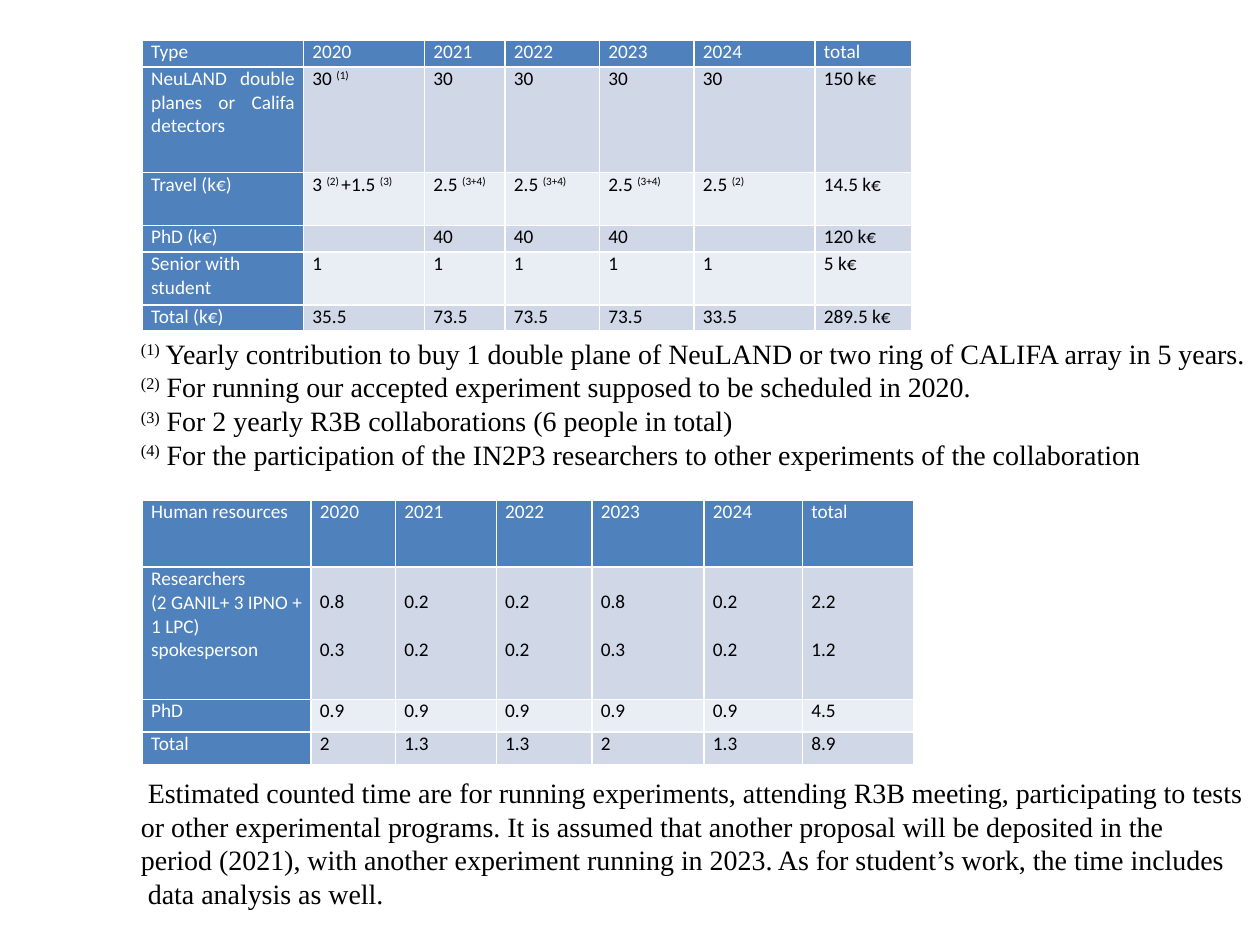
import lxml.etree
import pptx
import pptx.dml.color
import pptx.enum.text
import pptx.oxml.ns
import pptx.util

Inches = pptx.util.Inches
Pt = pptx.util.Pt
Align = pptx.enum.text.PP_ALIGN
Anchor = pptx.enum.text.MSO_ANCHOR
qn = pptx.oxml.ns.qn

COSTS = [
    ["Type", "2020", "2021", "2022", "2023", "2024", "total"],
    ["NeuLAND double planes or Califa detectors", "30 ^(1)", "30", "30", "30", "30", "150 k€"],
    ["Travel (k€)", "3 ^(2) ^+1.5 ^(3)", "2.5 ^(3+4)", "2.5 ^(3+4)", "2.5 ^(3+4)",
     "2.5 ^(2)", "14.5 k€"],
    ["PhD (k€)", "", "40", "40", "40", "", "120 k€"],
    ["Senior with student", "1", "1", "1", "1", "1", "5 k€"],
    ["Total (k€)", "35.5", "73.5", "73.5", "73.5", "33.5", "289.5 k€"],
]
STAFF = [
    ["Human resources", "2020", "2021", "2022", "2023", "2024", "total"],
    ["Researchers\n(2 GANIL+ 3 IPNO + 1 LPC)\nspokesperson",
     "0.8\n0.3", "0.2\n0.2", "0.2\n0.2", "0.8\n0.3", "0.2\n0.2", "2.2\n1.2"],
    ["PhD", "0.9", "0.9", "0.9", "0.9", "0.9", "4.5"],
    ["Total", "2", "1.3", "1.3", "2", "1.3", "8.9"],
]
NOTES = """^(1)^ Yearly contribution to buy 1 double plane of NeuLAND or two ring of CALIFA array in 5 years.
^(2)^ For running our accepted experiment supposed to be scheduled in 2020.
^(3)^ For 2 yearly R3B collaborations (6 people in total)
^(4)^ For the participation of the IN2P3 researchers to other experiments of the collaboration"""
TIME = """ Estimated counted time are for running experiments, attending R3B meeting, participating to tests
or other experimental programs. It is assumed that another proposal will be deposited in the
period (2021), with another experiment running in 2023. As for student’s work, the time includes
 data analysis as well."""


def color(code):
    return pptx.dml.color.RGBColor.from_string(code)


def write(frame, text, size=16, font="Times New Roman", ink="000000", align=Align.JUSTIFY, gap=0):
    """Fill a frame line by line; text between carets is raised."""
    for i, line in enumerate(text.split("\n")):
        para = frame.add_paragraph() if i else frame.paragraphs[0]
        para.alignment = align
        if i and gap:
            para.space_before = Pt(gap)
        for j, part in enumerate(line.split("^")):
            if not part:
                continue
            run = para.add_run()
            run.text = part
            run.font.size = Pt(size)
            run.font.name = font
            run.font.bold = False
            run.font.color.rgb = color(ink)
            if j % 2:
                run._r.get_or_add_rPr().set("baseline", "30000")
        if not line:
            lxml.etree.SubElement(para._p, qn("a:endParaRPr"), sz=str(size * 100))


class Deck:
    """Holds the table style and the current slide."""

    head = "4F81BD"
    bands = ("E9EDF4", "D0D8E8")
    edge = "FFFFFF"
    step = 13.4

    def __init__(self, show):
        self.slide = show.slides.add_slide(show.slide_layouts[6])

    def border(self, cell):
        props = cell._tc.get_or_add_tcPr()
        for side in ("lnL", "lnR", "lnT", "lnB"):
            line = lxml.etree.SubElement(props, qn("a:" + side), w=str(Pt(1)))
            fill = lxml.etree.SubElement(line, qn("a:solidFill"))
            lxml.etree.SubElement(fill, qn("a:srgbClr"), val=self.edge)

    def cell(self, cell, text, fill, ink, align):
        self.border(cell)
        cell.fill.solid()
        cell.fill.fore_color.rgb = color(fill)
        cell.margin_left = cell.margin_right = Inches(0.07)
        paired = text.count("\n") == 1
        cell.margin_top = Pt(self.step) if paired else 0
        cell.margin_bottom = 0
        write(cell.text_frame, text, size=11, font="Calibri", ink=ink, align=align,
              gap=self.step if paired else 0)

    def table(self, rows, top, widths, heights, align):
        shape = self.slide.shapes.add_table(
            len(rows), len(widths), Inches(1.13), Inches(top),
            Inches(sum(widths)), Inches(sum(heights)))
        grid = shape.table
        for col, width in zip(grid.columns, widths):
            col.width = Inches(width)
        for r, (row, height) in enumerate(zip(rows, heights)):
            grid.rows[r].height = Inches(height)
            for c, text in enumerate(row):
                main = r == 0 or c == 0
                self.cell(grid.cell(r, c), text,
                          self.head if main else self.bands[r % 2],
                          "FFFFFF" if main else "000000",
                          Align.LEFT if text.startswith("Senior") else align)

    def text(self, text, top, width, height, anchor=Anchor.TOP):
        box = self.slide.shapes.add_textbox(
            Inches(1.02), Inches(top), Inches(width), Inches(height))
        box.text_frame.word_wrap = True
        box.text_frame.auto_size = pptx.enum.text.MSO_AUTO_SIZE.SHAPE_TO_FIT_TEXT
        box.text_frame.vertical_anchor = anchor
        write(box.text_frame, text)


def main():
    show = pptx.Presentation()
    show.slide_width, show.slide_height = Inches(10), Inches(7.5)
    deck = Deck(show)
    deck.table(COSTS, 0.32, [1.28, 0.96, 0.64, 0.75, 0.75, 0.96, 0.77],
               [0.21, 0.84, 0.42, 0.21, 0.42, 0.21], Align.JUSTIFY)
    deck.table(STAFF, 3.97, [1.34, 0.67, 0.8, 0.76, 0.89, 0.78, 0.88],
               [0.53, 1.05, 0.26, 0.26], Align.LEFT)
    deck.text(TIME, 6.1, 10.46, 1.18, Anchor.MIDDLE)
    deck.text(NOTES, 2.62, 8.98, 1.18)
    show.save("out.pptx")


if __name__ == "__main__":
    main()
